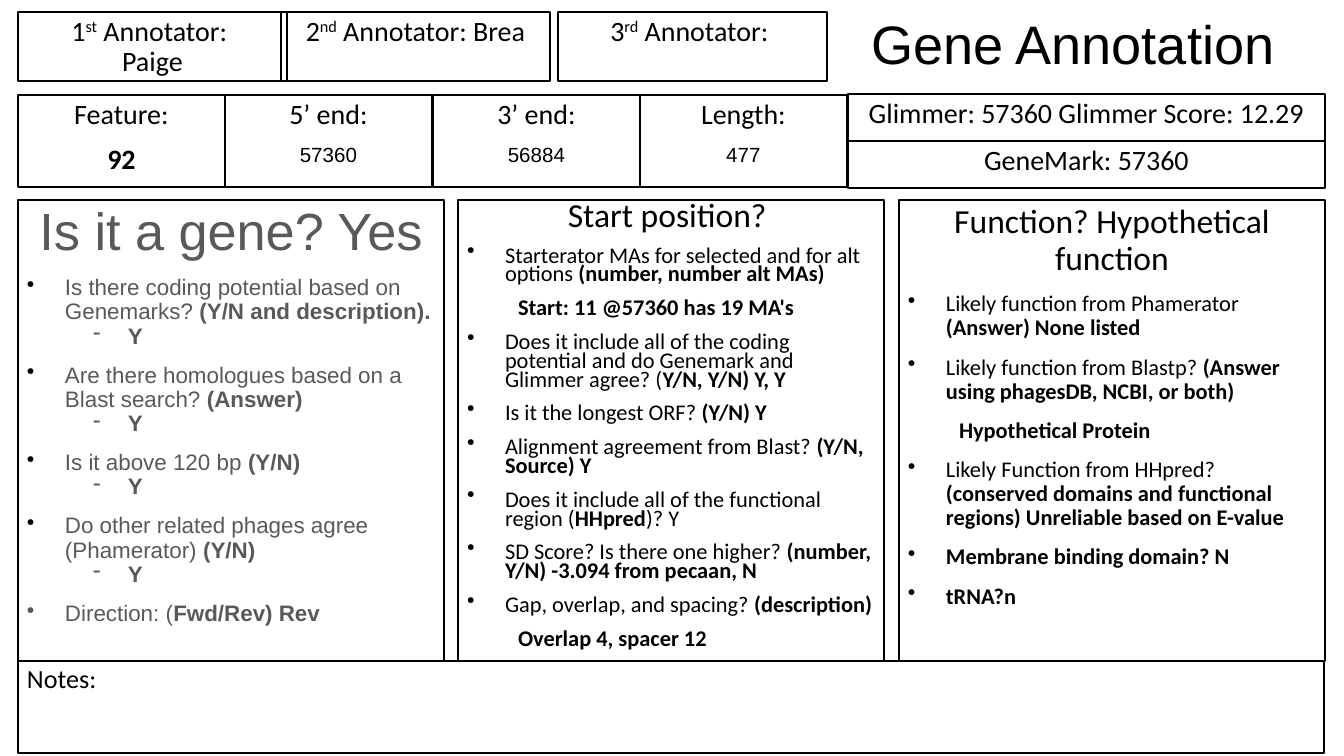
"""Build a one-page gene annotation form."""
import lxml.etree
import pptx
import pptx.dml.color
import pptx.enum.shapes
import pptx.enum.text
import pptx.oxml.ns
import pptx.util

BLACK = pptx.dml.color.RGBColor(0, 0, 0)
GRAY = pptx.dml.color.RGBColor(0x59, 0x59, 0x59)
SCALE = 914400 / 134.4
ALIGN = pptx.enum.text.PP_ALIGN
ANCHOR = pptx.enum.text.MSO_ANCHOR
LEFT, WIDE = 18, 1306


def px(count):
    return pptx.util.Emu(round(count * SCALE))


def mark(para, sign, color, left, hang):
    qn = pptx.oxml.ns.qn
    props = para._p.get_or_add_pPr()
    props.set("marL", str(px(left)))
    props.set("indent", str(px(hang)))
    if sign:
        tint = lxml.etree.SubElement(props, qn("a:buClr"))
        lxml.etree.SubElement(tint, qn("a:srgbClr"), val=str(color))
        lxml.etree.SubElement(props, qn("a:buChar"), char=sign)


def write(frame, text, size=15, font="Calibri", color=BLACK, align=ALIGN.CENTER,
          line=0.9, before=0, sign="", tint=BLACK, left=0, hang=0):
    para = frame.add_paragraph() if frame.text else frame.paragraphs[0]
    para.alignment = align
    para.line_spacing = line
    para.space_before = pptx.util.Pt(before)
    mark(para, sign, tint, left, hang)
    for turn, part in enumerate(text.split("*")):
        for step, bit in enumerate(part.split("^")):
            if not bit:
                continue
            run = para.add_run()
            run.text = bit
            run.font.size = pptx.util.Pt(size)
            run.font.name = font
            run.font.color.rgb = color
            run.font.bold = turn % 2 == 1
            if step % 2:
                run.font._element.set("baseline", "30000")


class Form:
    ITEMS = {
        "dot": dict(sign="•", left=38, hang=-38, before=8),
        "dash": dict(sign="-", tint=GRAY, left=101, hang=-35),
        "plain": dict(left=51, before=8),
        "last": dict(sign="•", tint=GRAY, left=38, hang=-38, before=8),
    }

    def __init__(self):
        self.deck = pptx.Presentation()
        self.deck.slide_width, self.deck.slide_height = px(1344), px(756)
        self.slide = self.deck.slides.add_slide(self.deck.slide_layouts[6])

    def frame(self, shape, anchor=ANCHOR.TOP):
        frame = shape.text_frame
        frame.word_wrap = True
        frame.vertical_anchor = anchor
        frame.margin_left = frame.margin_right = px(9)
        frame.margin_top = frame.margin_bottom = px(5)
        return frame

    def title(self, text, *place):
        shape = self.slide.shapes.add_textbox(*map(px, place))
        write(self.frame(shape, ANCHOR.BOTTOM), text, size=29, font="Arial")

    def box(self, *place):
        kind = pptx.enum.shapes.MSO_SHAPE.RECTANGLE
        shape = self.slide.shapes.add_shape(kind, *map(px, place))
        shape.shadow.inherit = False
        shape.fill.background()
        shape.line.color.rgb = BLACK
        shape.line.width = pptx.util.Pt(0.75)
        return self.frame(shape)

    def label(self, text, *place, **style):
        frame = self.box(*place)
        for part in text.split("\n"):
            write(frame, part, **style)

    def field(self, name, value, *place, **style):
        frame = self.box(*place)
        write(frame, name)
        write(frame, value, before=8, **style)

    def panel(self, head, items, *place, size=18, **style):
        frame = self.box(*place)
        write(frame, head, size=size, **style)
        for kind, text in items:
            write(frame, text, size=12, align=ALIGN.LEFT, **style, **self.ITEMS[kind])


GENE = [
    ("dot", "Is there coding potential based on Genemarks? *(Y/N and description).*"),
    ("dash", "*Y*"),
    ("dot", "Are there homologues based on a Blast search? *(Answer)*"),
    ("dash", "*Y*"),
    ("dot", "Is it above 120 bp *(Y/N)*"),
    ("dash", "*Y*"),
    ("dot", "Do other related phages agree (Phamerator)* (Y/N)*"),
    ("dash", "*Y*"),
    ("last", "Direction: (*Fwd/Rev) Rev*"),
]
START = [
    ("dot", "Starterator MAs for selected and for alt options* (number, number alt MAs)*"),
    ("plain", "*Start: 11 @57360 has 19 MA's*"),
    ("dot", "Does it include all of the coding potential and do Genemark and "
            "Glimmer agree? (*Y/N, Y/N) Y, Y*"),
    ("dot", "Is it the longest ORF? *(Y/N) Y*"),
    ("dot", "Alignment agreement from Blast? *(Y/N, Source) Y*"),
    ("dot", "Does it include all of the functional region (*HHpred*)? Y"),
    ("dot", "SD Score? Is there one higher? *(number, Y/N) -3.094 from pecaan, N*"),
    ("dot", "Gap, overlap, and spacing? *(description)*"),
    ("plain", "*Overlap 4, spacer 12*"),
]
ROLE = [
    ("dot", "Likely function from Phamerator *(Answer) None listed*"),
    ("dot", "Likely function from Blastp? *(Answer using phagesDB, NCBI, or both)*"),
    ("plain", "*Hypothetical Protein*"),
    ("dot", "Likely Function from HHpred? *(conserved domains and functional "
            "regions) Unreliable based on E-value*"),
    ("dot", "*Membrane binding domain? N*"),
    ("dot", "*tRNA?n*"),
]
PANELS = [
    ("Is it a gene? Yes", GENE, dict(size=28, font="Arial", color=GRAY)),
    ("Start position? ", START, dict(line=0.7)),
    ("Function? Hypothetical function", ROLE, {}),
]
SMALL = dict(size=11, font="Arial")
FIELDS = [
    ("Feature:", "*92*", {}),
    ("5’ end:", "57360", SMALL),
    ("3’ end:", "56884", SMALL),
    ("Length:", "477", SMALL),
]
NAMES = [
    (LEFT, "1^st^ Annotator: \nPaige"),
    (281, "2^nd^ Annotator: Brea"),
    (558, "3^rd^ Annotator: "),
]
CALLS = ["Glimmer: 57360 Glimmer Score: 12.29", "GeneMark: 57360"]


def main():
    form = Form()
    form.title("Gene Annotation", 821, 8, 504, 73)
    for step, (head, items, style) in enumerate(PANELS):
        form.panel(head, items, LEFT + 881 * step // 2, 200, 426, 461, **style)
    for step, (name, value, style) in enumerate(FIELDS):
        form.field(name, value, LEFT + 830 * step // 4, 95, 207, 92, **style)
    for step, text in enumerate(CALLS):
        form.label(text, 848, 94 + 47 * step, 477, 47)
    for left, text in NAMES:
        form.label(text, left, 12, 269, 69)
    form.label("Notes:", LEFT, 661, WIDE, 92, size=14, align=ALIGN.LEFT)
    form.deck.save("out.pptx")


if __name__ == "__main__":
    main()
